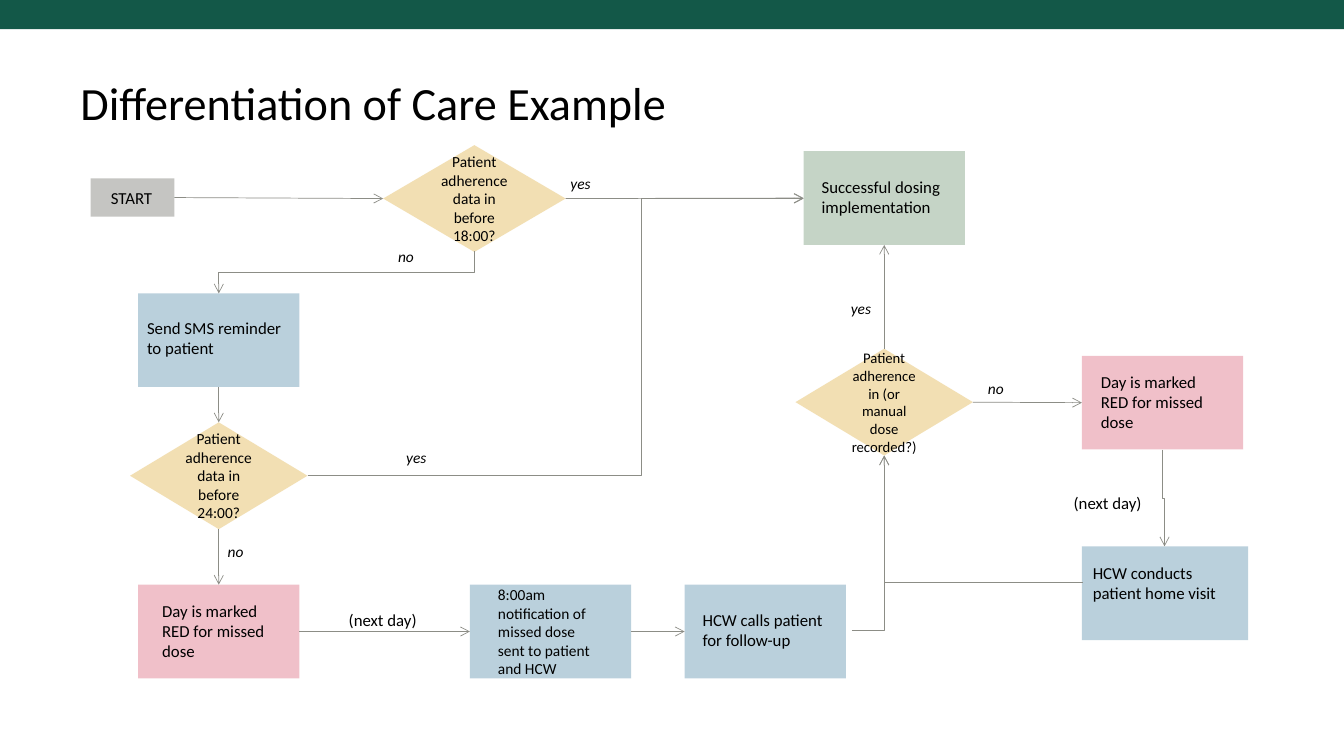
import pptx
import pptx.dml.color
import pptx.enum.shapes
import pptx.enum.text
import pptx.oxml
import pptx.oxml.ns
import pptx.util
from pptx.enum.shapes import MSO_CONNECTOR, MSO_SHAPE
from pptx.enum.text import MSO_ANCHOR, MSO_AUTO_SIZE, PP_ALIGN

PX = 9144  # EMU per px, 100 px to the inch
FONT = "Calibri"
BLACK, GREEN_BAND, GREY = "000000", "135848", "8C8D86"
BLUE, GREEN, YELLOW, RED = "77A2BB", "8DAB8E", "E6C069", "E28394"
TOP, LEFT, BOTTOM, RIGHT = range(4)

TITLE = "Differentiation of Care Example"
MISSED = "Day is marked RED for missed dose"

# name: (box, colour, text, text box, size)
STEPS = {
    "sms": ((137, 291, 160, 93), BLUE, "Send SMS reminder to patient", (136, 310, 159, 50), 12),
    "start": ((90, 177, 83, 38), GREY, "START", (89, 181, 83, 30), 12),
    "success": ((797, 150, 160, 93), GREEN, "Successful dosing implementation",
                (805, 170, 159, 50), 12),
    "missed 1": ((137, 580, 160, 93), RED, MISSED, (151, 591, 137, 71), 12),
    "notify": ((466, 580, 160, 93), BLUE,
               "8:00am notification of missed dose sent to patient and HCW",
               (484, 576, 125, 103), 11),
    "call": ((679, 580, 160, 93), BLUE, "HCW calls patient for follow-up", (687, 600, 158, 50), 12),
    "visit": ((1073, 542, 165, 93), BLUE, "HCW conducts patient home visit",
              (1074, 553, 164, 50), 12),
    "missed 2": ((1073, 353, 160, 93), RED, MISSED, (1082, 364, 137, 71), 12),
}
# name: (box, text, size)
DECISIONS = {
    "by 18:00": ((380, 144, 181, 106), "Patient adherence data in before 18:00?", 11),
    "by 24:00": ((129, 419, 176, 106), "Patient adherence data in before 24:00?", 11),
    "recorded": ((789, 346, 176, 106), "Patient adherence in (or manual dose recorded?)", 10.5),
}
STRAIGHT_ARROWS = [
    ("start", RIGHT, "by 18:00", LEFT),
    ("by 18:00", RIGHT, "success", LEFT),
    ("sms", BOTTOM, "by 24:00", TOP),
    ("by 24:00", BOTTOM, "missed 1", TOP),
    ("missed 1", RIGHT, "notify", LEFT),
    ("notify", RIGHT, "call", LEFT),
    ("recorded", TOP, "success", BOTTOM),
    ("recorded", RIGHT, "missed 2", LEFT),
]
YES_NO, NEXT_DAY = (46, 29, 11, True), (125, 30, 12, False)
LABELS = [
    ("(next day)", 336, 600, NEXT_DAY), ("(next day)", 1055, 484, NEXT_DAY),
    ("no", 216, 533, YES_NO), ("no", 970, 371, YES_NO), ("no", 385, 240, YES_NO),
    ("yes", 556, 168, YES_NO), ("yes", 393, 440, YES_NO), ("yes", 834, 292, YES_NO),
]


def emu(*lengths):
    return [round(length * PX) for length in lengths]


def rgb(colour):
    return pptx.dml.color.RGBColor.from_string(colour)


def add_xml(parent, tag, **attributes):
    element = pptx.oxml.parse_xml(f"<a:{tag} {pptx.oxml.ns.nsdecls('a')}/>")
    for name, value in attributes.items():
        element.set(name, value)
    parent.append(element)


def write(shape, text, size, align=PP_ALIGN.LEFT, anchor=MSO_ANCHOR.TOP, italic=None):
    frame = shape.text_frame
    frame.word_wrap = True
    frame.vertical_anchor = anchor
    paragraph = frame.paragraphs[0]
    paragraph.text = text
    paragraph.alignment = align
    font = paragraph.font
    font.name, font.size, font.italic = FONT, pptx.util.Pt(size), italic
    font.color.rgb = rgb(BLACK)
    return paragraph


def add_text(shapes, box, text, size, **style):
    text_box = shapes.add_textbox(*emu(*box))
    paragraph = write(text_box, text, size, **style)
    text_box.text_frame.auto_size = MSO_AUTO_SIZE.SHAPE_TO_FIT_TEXT
    return paragraph


def add_block(shapes, kind, box, colour, opacity=50):
    shape = shapes.add_shape(kind, *emu(*box))
    shape.shadow.inherit = False
    shape.line.fill.background()
    shape.fill.solid()
    shape.fill.fore_color.rgb = rgb(colour)
    if opacity < 100:
        fill = next(shape._element.spPr.iter(pptx.oxml.ns.qn("a:srgbClr")))
        add_xml(fill, "alpha", val=str(opacity * 1000))
    return shape


def add_arrow(slide, kind, begin=(0, 0), end=(0, 0)):
    arrow = slide.shapes.add_connector(kind, *emu(*begin, *end))
    arrow.line.color.rgb = rgb(GREY)
    arrow.line.width = pptx.util.Pt(0.5)
    add_xml(arrow.line._get_or_add_ln(), "tailEnd", type="arrow")
    add_xml(arrow._element.spPr, "effectLst")
    return arrow


def add_elbow(slide, begin, end):
    return add_arrow(slide, MSO_CONNECTOR.ELBOW, begin, end)


def add_falling_elbow(slide, begin, end):
    """Elbow that leaves downwards: a sideways elbow turned by 90 degrees."""
    (x1, y1), (x2, y2) = begin, end
    middle_x, middle_y = (x1 + x2) / 2, (y1 + y2) / 2
    half_x, half_y = (x2 - x1) / 2, (y2 - y1) / 2
    arrow = add_elbow(slide, (middle_x - half_y, middle_y + half_x),
                      (middle_x + half_y, middle_y - half_x))
    arrow._element.spPr.find(pptx.oxml.ns.qn("a:xfrm")).set("rot", "5400000")


def geometry(arrow):
    return arrow._element.spPr.find(pptx.oxml.ns.qn("a:prstGeom"))


def main():
    presentation = pptx.Presentation()
    presentation.slide_width, presentation.slide_height = emu(1333, 750)
    slide = presentation.slides.add_slide(presentation.slide_layouts[6])
    add_block(slide.shapes, MSO_SHAPE.RECTANGLE, (0, 0, 1333, 29), GREEN_BAND, 100)
    title = slide.shapes.add_textbox(*emu(70, 75, 1190, 64))
    write(title, TITLE, 33).line_spacing = 0.89

    nodes = {}
    for name, (box, colour, text, text_box, size) in STEPS.items():
        group = slide.shapes.add_group_shape()
        nodes[name] = add_block(group.shapes, MSO_SHAPE.RECTANGLE, box, colour)
        style = {"align": PP_ALIGN.CENTER, "anchor": MSO_ANCHOR.MIDDLE} if name == "start" else {}
        add_text(group.shapes, text_box, text, size, **style)
    for name, (box, text, size) in DECISIONS.items():
        nodes[name] = add_block(slide.shapes, MSO_SHAPE.FLOWCHART_DECISION, box, YELLOW)
        write(nodes[name], text, size, PP_ALIGN.CENTER, MSO_ANCHOR.MIDDLE)

    for source, source_side, target, target_side in STRAIGHT_ARROWS:
        arrow = add_arrow(slide, MSO_CONNECTOR.STRAIGHT)
        arrow.begin_connect(nodes[source], source_side)
        arrow.end_connect(nodes[target], target_side)

    add_falling_elbow(slide, (470, 249), (217, 291))
    add_falling_elbow(slide, (1153, 446), (1155, 542))
    late_yes = add_elbow(slide, (305, 472), (797, 197))
    add_xml(geometry(late_yes).find(pptx.oxml.ns.qn("a:avLst")), "gd",
            name="adj1", fmla="val 67300")
    for begin in ((845, 625), (1074, 578)):
        corner = add_elbow(slide, begin, (877, 452))
        geometry(corner).set("prst", "bentConnector2")

    for text, left, top, (width, height, size, italic) in LABELS:
        add_text(slide.shapes, (left, top, width, height), text, size, italic=italic)
    presentation.save("out.pptx")


if __name__ == "__main__":
    main()
